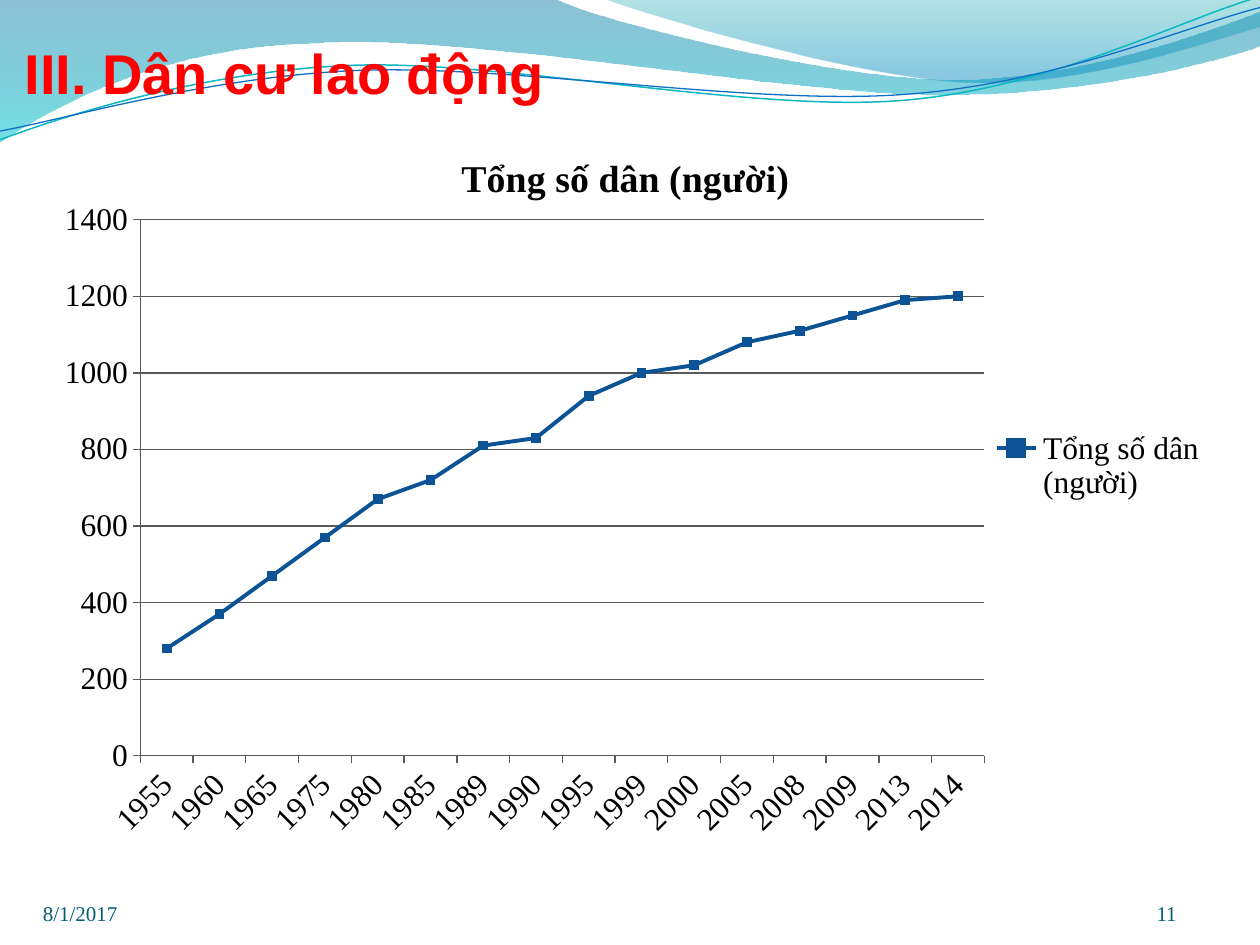
from lxml import etree
from pptx import Presentation, util as u
from pptx.chart.data import CategoryChartData
from pptx.dml.color import RGBColor
from pptx.enum import chart as ch, text
from pptx.oxml import parse_xml
from pptx.oxml.ns import nsdecls, qn

WIDTH, HEIGHT = u.Inches(10), u.Inches(7.5)
RED = RGBColor(0xFF, 0x00, 0x00)
BLACK = RGBColor(0x00, 0x00, 0x00)
GREY = RGBColor(0x59, 0x59, 0x59)
NAVY = RGBColor(0x0B, 0x53, 0x94)
FOOTER = RGBColor(0x04, 0x5D, 0x75)
BLUE = RGBColor(0x0F, 0x6F, 0xC6)
AQUA = RGBColor(0x0A, 0xB8, 0xBF)
DEEP = RGBColor(0x00, 0x74, 0xA1)
CYAN = RGBColor(0x00, 0xC6, 0xCF)
TEAL = RGBColor(0x00, 0xA1, 0xA9)
SKY = RGBColor(0x00, 0x8B, 0xBF)
SERIF = "Times New Roman"

BANDS = [
    ([(0, 0), (4.4, -0.01), (4.76, 0.17, 6.64, 0.63, 7.58, 0.63),
      (8.53, 0.63, 9.58, 0.26, 10, 0.09), (10.01, 0.36),
      (9.83, 0.44, 8.7, 0.76, 7.46, 0.75), (6.22, 0.75, 3.82, 0.28, 2.57, 0.34),
      (1.29, 0.36, 0.46, 0.83, -0.01, 1.13), (0, 0)],
     [(0, DEEP, 45), (100, CYAN, 55)]),
    ([(4.79, -0.01), (5.09, 0.11, 6.82, 0.62, 7.69, 0.65),
      (8.56, 0.69, 9.61, 0.32, 10, 0.21), (10, 0), (4.79, -0.01)],
     [(0, TEAL, 30), (80, SKY, 45)]),
]
WAVES = [
    ([(0, 1.11), (0.48, 0.93, 1.58, 0.57, 2.77, 0.52),
      (3.95, 0.47, 5.93, 0.89, 7.13, 0.8), (8.33, 0.71, 9.38, 0.15, 9.98, -0.02)],
     AQUA, 0.85),
    ([(0, 1.04), (0.47, 0.96, 1.64, 0.61, 2.83, 0.56),
      (4.03, 0.51, 5.97, 0.84, 7.17, 0.75), (8.36, 0.67, 9.41, 0.21, 10, 0.06)],
     BLUE, 0.75),
]
POPULATION = {
    "1955": 280, "1960": 370, "1965": 470, "1975": 570, "1980": 670, "1985": 720,
    "1989": 810, "1990": 830, "1995": 940, "1999": 1000, "2000": 1020, "2005": 1080,
    "2008": 1110, "2009": 1150, "2013": 1190, "2014": 1200,
}


def assign(obj, **values):
    for name, value in values.items():
        setattr(obj, name, value)


def percent_box(left, top, width, height):
    return [round(share * side / 100) for share, side in
            zip((left, top, width, height), (WIDTH, HEIGHT) * 2)]


def bend(sp, segments):
    corners = iter(list(sp._element.iter(qn("a:lnTo"))))
    for seg in segments:
        first = next(corners)
        if len(seg) == 6:
            first.tag = qn("a:cubicBezTo")
            for _ in range(2):
                extra = next(corners)
                first.append(extra[0])
                extra.getparent().remove(extra)


def add_outline(s, outline, close):
    start, *points = [(u.Inches(seg[i]), u.Inches(seg[i + 1]))
                      for seg in outline for i in range(0, len(seg), 2)]
    builder = s.shapes.build_freeform(*start, scale=1.0)
    builder.add_line_segments(points, close=close)
    sp = builder.convert_to_shape()
    sp.shadow.inherit = False
    bend(sp, outline[1:])
    return sp


def add_band(s, outline, stops):
    sp = add_outline(s, outline, True)
    sp.line.fill.background()
    sp.fill.gradient()
    grad = sp._element.spPr.find(qn("a:gradFill"))
    gs = "".join(
        f'<a:gs pos="{pos * 1000}"><a:srgbClr val="{color}">'
        f'<a:alpha val="{alpha * 1000}"/></a:srgbClr></a:gs>'
        for pos, color, alpha in stops)
    grad.getparent().replace(grad, parse_xml(
        f'<a:gradFill {nsdecls("a")} rotWithShape="1"><a:gsLst>{gs}</a:gsLst>'
        '<a:lin ang="5400000" scaled="0"/></a:gradFill>'))


def add_wave(s, outline, color, width):
    sp = add_outline(s, outline, False)
    sp.fill.background()
    style_line(sp.line, color, width)


def set_font(font, color, **values):
    assign(font, **values)
    font.color.rgb = color


def style_line(line, color, width):
    line.color.rgb = color
    line.width = u.Pt(width)


def add_label(s, box, words, color, align=text.PP_ALIGN.LEFT, inset=0, **font):
    tf = s.shapes.add_textbox(*percent_box(*box)).text_frame
    assign(tf, word_wrap=True, vertical_anchor=text.MSO_ANCHOR.BOTTOM,
           margin_left=0, margin_right=0, margin_top=u.Inches(inset), margin_bottom=0)
    p = tf.paragraphs[0]
    p.alignment = align
    r = p.add_run()
    r.text = words
    set_font(r.font, color, **font)


def place(part, index, **values):
    for old in part.findall(qn("c:layout")):
        part.remove(old)
    layout = etree.Element(qn("c:layout"))
    manual = etree.SubElement(layout, qn("c:manualLayout"))
    for name, value in values.items():
        etree.SubElement(manual, qn(f"c:{name}")).set("val", str(value))
    part.insert(index, layout)


def add_population_chart(s, box, name):
    data = CategoryChartData()
    data.categories = list(POPULATION)
    data.add_series(name, list(POPULATION.values()))
    chart = s.shapes.add_chart(ch.XL_CHART_TYPE.LINE_MARKERS,
                               *percent_box(*box), data).chart
    set_font(chart.font, BLACK, name=SERIF, size=u.Pt(18))
    assign(chart, has_title=True, has_legend=True)
    tf = chart.chart_title.text_frame
    tf.text = name
    set_font(tf.paragraphs[0].runs[0].font, BLACK,
             name=SERIF, size=u.Pt(21.6), bold=True)
    assign(chart.legend, position=ch.XL_LEGEND_POSITION.RIGHT, include_in_layout=False)
    for axis in (chart.category_axis, chart.value_axis):
        axis.major_tick_mark = ch.XL_TICK_MARK.OUTSIDE
        style_line(axis.format.line, GREY, 0.75)
    axis = chart.value_axis
    assign(axis, minimum_scale=0, maximum_scale=1400, major_unit=200,
           has_major_gridlines=True)
    style_line(axis.major_gridlines.format.line, GREY, 0.75)
    chart.plots[0].vary_by_categories = False
    series = chart.plots[0].series[0]
    series.smooth = False
    style_line(series.format.line, NAVY, 2.25)
    assign(series.marker, style=ch.XL_MARKER_STYLE.SQUARE, size=5)
    series.marker.format.fill.solid()
    series.marker.format.fill.fore_color.rgb = NAVY
    style_line(series.marker.format.line, NAVY, 0.75)
    edge = {"xMode": "edge", "yMode": "edge"}
    place(chart._chartSpace.chart.plotArea, 0, layoutTarget="inner", **edge,
          x=0.089, y=0.129, w=0.715, h=0.731)
    place(chart.legend._element, 1, **edge, x=0.81, y=0.41, w=0.18, h=0.11)


def main():
    prs = Presentation()
    assign(prs, slide_width=WIDTH, slide_height=HEIGHT)
    s = prs.slides.add_slide(prs.slide_layouts[6])
    for band in BANDS:
        add_band(s, *band)
    for wave in WAVES:
        add_wave(s, *wave)
    add_label(s, (1.95, 3.9, 54.4, 7.3), "III. Dân cư lao động", RED, inset=0.05,
              name="Arial", size=u.Pt(32), bold=True)
    add_population_chart(s, (2.8, 13.25, 93.7, 77.6), "Tổng số dân (người)")
    small = {"name": SERIF, "size": u.Pt(12)}
    add_label(s, (3.4, 92.4, 23.3, 5.6), "8/1/2017", FOOTER, **small)
    add_label(s, (85.1, 92.4, 8.3, 5.6), "11", FOOTER, text.PP_ALIGN.RIGHT, **small)
    prs.save("out.pptx")


if __name__ == "__main__":
    main()
